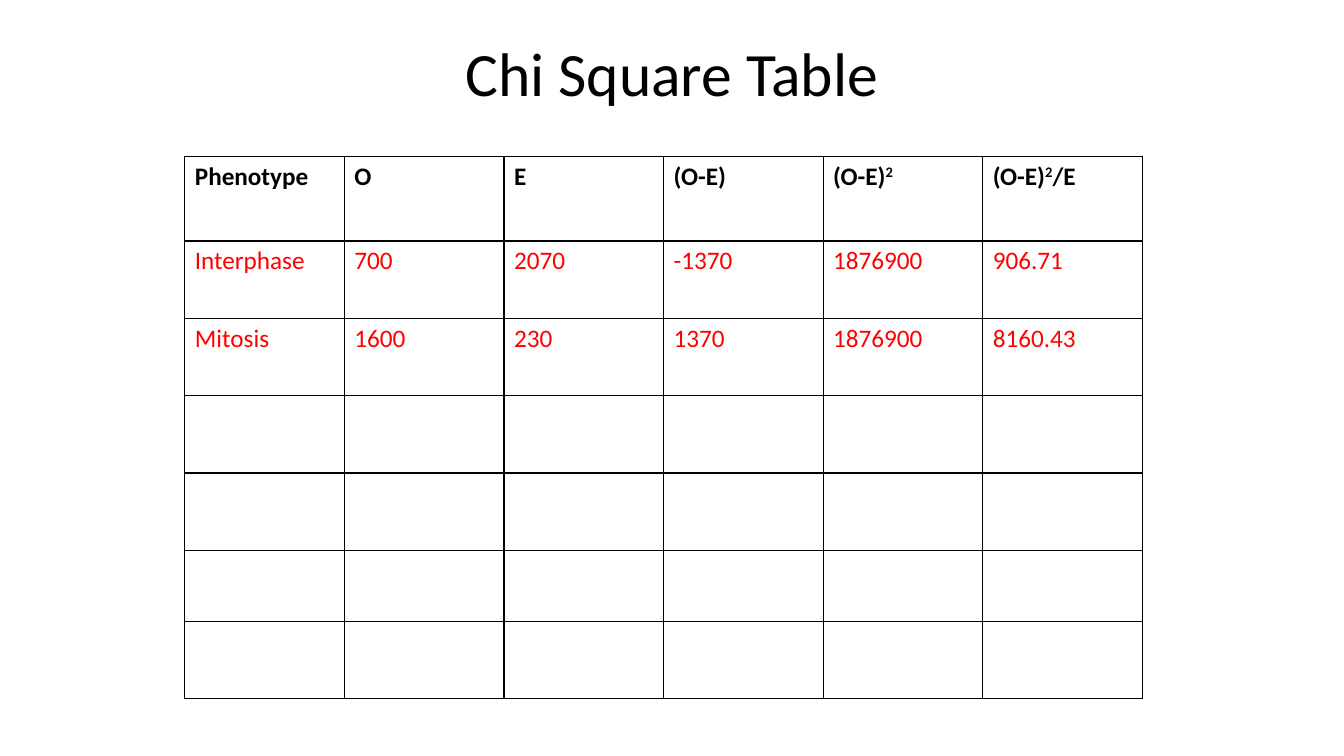
from lxml import etree
from pptx import Presentation
from pptx.dml.color import RGBColor
from pptx.enum.text import MSO_ANCHOR, PP_ALIGN
from pptx.oxml.ns import qn
from pptx.util import Pt

CENTER, TOP = PP_ALIGN.CENTER, MSO_ANCHOR.TOP
BLACK = RGBColor(0x00, 0x00, 0x00)
RED = RGBColor(0xFF, 0x00, 0x00)
WHITE = RGBColor(0xFF, 0xFF, 0xFF)
FONT = "Calibri"

# Content: "^" comes before and after a superscript
TITLE = "Chi Square Table"
HEADINGS = ["Phenotype", "O", "E", "(O-E)", "(O-E)^2", "(O-E)^2^/E"]
COUNTS = [
    ["Interphase", "700", "2070", "-1370", "1876900", "906.71"],
    ["Mitosis", "1600", "230", "1370", "1876900", "8160.43"],
]
SPARE_ROWS = 4
ROWS = [HEADINGS] + COUNTS + [[""] * len(HEADINGS)] * SPARE_ROWS

# Layout in points
COLUMN_WIDTH = 114
ROW_HEIGHTS = [60.5, 55.3, 55.3, 55.3, 55.3, 50.5, 55.3]
TABLE_LEFT, TABLE_TOP = 132, 111.6


def add_borders(cell):
    properties = cell._tc.get_or_add_tcPr()
    for side in ("lnL", "lnR", "lnT", "lnB"):
        line = etree.SubElement(properties, qn(f"a:{side}"), w=str(Pt(1)))
        fill = etree.SubElement(line, qn("a:solidFill"))
        etree.SubElement(fill, qn("a:srgbClr"), val=str(BLACK))


def write_cell(cell, text, is_heading):
    add_borders(cell)
    cell.fill.solid()
    cell.fill.fore_color.rgb = WHITE
    paragraph = cell.text_frame.paragraphs[0]
    font = paragraph.font
    font.name, font.size, font.bold = FONT, Pt(18), is_heading
    font.color.rgb = BLACK if is_heading else RED
    if not text:
        return
    for index, part in enumerate(text.split("^")):
        run = paragraph.add_run()
        run.text = part
        if index % 2:
            run._r.get_or_add_rPr().set("baseline", "30000")


presentation = Presentation()
presentation.slide_width, presentation.slide_height = Pt(960), Pt(540)
slide = presentation.slides.add_slide(presentation.slide_layouts[6])

# Title
title = slide.shapes.add_textbox(Pt(156), Pt(21.6), Pt(648), Pt(90)).text_frame
title.word_wrap = True
title.vertical_anchor = TOP
heading = title.paragraphs[0]
heading.text = TITLE
heading.alignment = CENTER
heading.font.name, heading.font.size = FONT, Pt(44)
heading.font.color.rgb = BLACK

# Table
table = slide.shapes.add_table(
    len(ROWS), len(HEADINGS), Pt(TABLE_LEFT), Pt(TABLE_TOP),
    Pt(COLUMN_WIDTH * len(HEADINGS)), Pt(sum(ROW_HEIGHTS))).table
table.first_row = table.horz_banding = False
for column in table.columns:
    column.width = Pt(COLUMN_WIDTH)
for r, (values, height) in enumerate(zip(ROWS, ROW_HEIGHTS)):
    table.rows[r].height = Pt(height)
    for c, value in enumerate(values):
        write_cell(table.cell(r, c), value, r == 0)

presentation.save("out.pptx")
